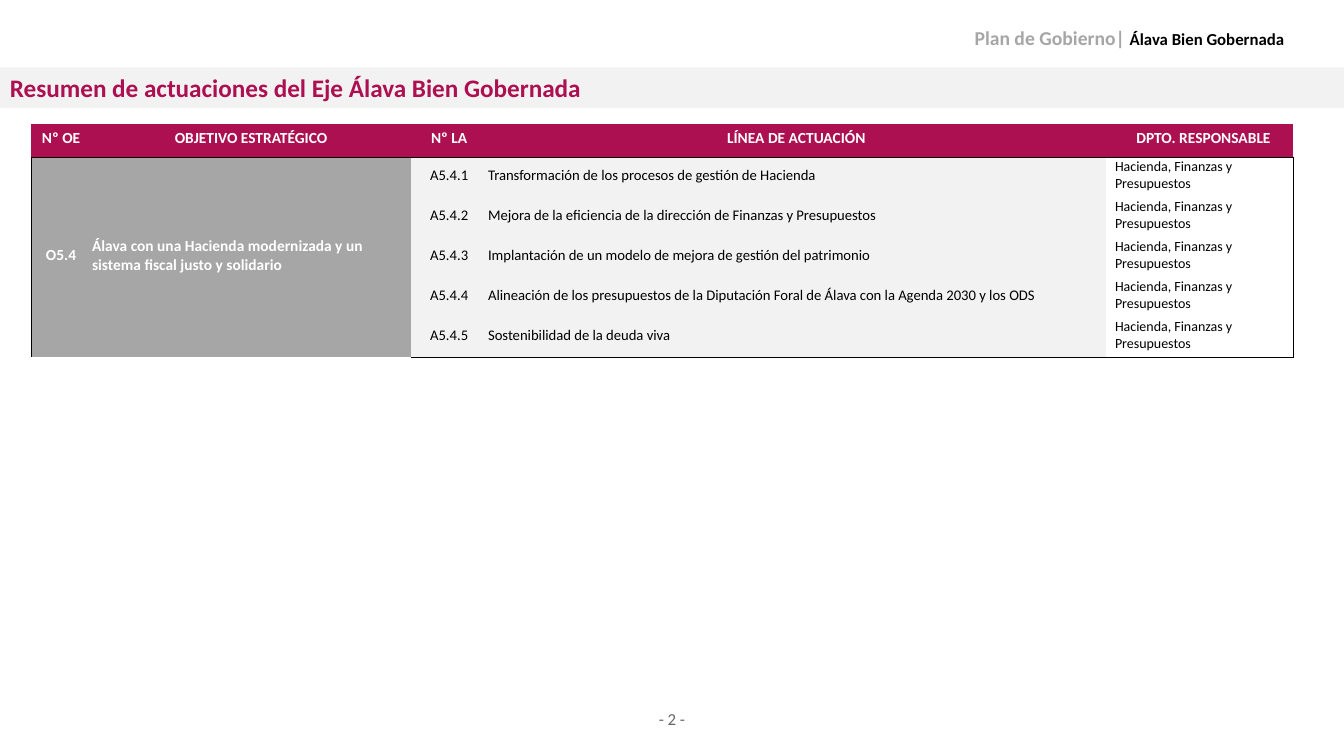
import pptx
import pptx.util
import pptx.dml.color
import pptx.enum.shapes
import pptx.enum.text
import pptx.oxml.ns
from lxml import etree

Cm, Pt = pptx.util.Cm, pptx.util.Pt
ALIGN = pptx.enum.text.PP_ALIGN
ANCHOR = pptx.enum.text.MSO_ANCHOR
qn = pptx.oxml.ns.qn

COLORS = {
    "brand": "AC1051", "band": "F2F2F2", "gray": "A6A6A6",
    "number": "666666", "black": "000000", "white": "FFFFFF",
}

HEADERS = ["Nº OE", "OBJETIVO ESTRATÉGICO", "Nº LA", "LÍNEA DE ACTUACIÓN", "DPTO. RESPONSABLE"]
OBJECTIVE = ["O5.4", "Álava con una Hacienda modernizada y un sistema fiscal justo y solidario"]
DEPARTMENT = "Hacienda, Finanzas y Presupuestos"
ACTIONS = [
    "Transformación de los procesos de gestión de Hacienda",
    "Mejora de la eficiencia de la dirección de Finanzas y Presupuestos",
    "Implantación de un modelo de mejora de gestión del patrimonio",
    "Alineación de los presupuestos de la Diputación Foral de Álava con la Agenda 2030 y los ODS",
    "Sostenibilidad de la deuda viva",
]
COL_WIDTHS = [1.3, 8.28, 1.7, 15.8, 4.72]
HEADER_HEIGHT, ROW_HEIGHT = 0.84, 0.99


def rgb(name):
    return pptx.dml.color.RGBColor.from_string(COLORS[name])


def add_run(p, text, size=11, color="black", bold=False, font="Calibri"):
    r = p.add_run()
    r.text = text
    r.font.name, r.font.size, r.font.bold = font, Pt(size), bold
    r.font.color.rgb = rgb(color)


class SlideBuilder:
    def __init__(self, prs):
        self.s = prs.slides.add_slide(prs.slide_layouts[6])

    def text(self, box, runs, align, anchor=ANCHOR.TOP):
        tf = self.s.shapes.add_textbox(*map(Cm, box)).text_frame
        tf.word_wrap, tf.vertical_anchor = True, anchor
        p = tf.paragraphs[0]
        p.alignment = align
        for text, fmt in runs:
            add_run(p, text, **fmt)

    def title_band(self, box, text):
        sp = self.s.shapes.add_shape(pptx.enum.shapes.MSO_SHAPE.RECTANGLE, *map(Cm, box))
        sp.shadow.inherit = False
        sp.fill.solid()
        sp.fill.fore_color.rgb = rgb("band")
        sp.line.fill.background()
        tf = sp.text_frame
        tf.word_wrap, tf.vertical_anchor = True, ANCHOR.TOP
        p = tf.paragraphs[0]
        p.alignment, p.space_after = ALIGN.LEFT, Pt(6)
        add_run(p, text, size=18, color="brand", bold=True)

    def table(self, left, top, rows, widths, heights):
        tbl = self.s.shapes.add_table(len(rows), len(widths), Cm(left), Cm(top),
                                      Cm(sum(widths)), Cm(sum(heights))).table
        tbl.first_row = tbl.horz_banding = False
        for col, width in zip(tbl.columns, widths):
            col.width = Cm(width)
        for row, height in zip(tbl.rows, heights):
            row.height = Cm(height)
        for i, values in enumerate(rows):
            for j, (text, fill, align, fmt) in enumerate(values):
                cell = tbl.cell(i, j)
                self.frame_cell(cell, i, j, len(rows) - 1, len(widths) - 1)
                self.fill_cell(cell, text, fill, align, fmt)
        return tbl

    def frame_cell(self, cell, i, j, last_row, last_col):
        """Draw the black frame around the body rows and no other border."""
        sides = {
            "L": i > 0 and j == 0,
            "R": i > 0 and j == last_col,
            "T": i == 1,
            "B": i in (0, last_row),
        }
        tc_pr = cell._tc.get_or_add_tcPr()
        for side, visible in sides.items():
            ln = etree.SubElement(tc_pr, qn(f"a:ln{side}"), w=str(Pt(1)))
            if visible:
                fill = etree.SubElement(ln, qn("a:solidFill"))
                etree.SubElement(fill, qn("a:srgbClr"), val=COLORS["black"])
            else:
                etree.SubElement(ln, qn("a:noFill"))

    def fill_cell(self, cell, text, fill, align, fmt):
        cell.fill.solid()
        cell.fill.fore_color.rgb = rgb(fill)
        cell.margin_left = cell.margin_right = cell.margin_top = Cm(0.03)
        cell.margin_bottom = Cm(0.13)
        cell.vertical_anchor = ANCHOR.MIDDLE
        p = cell.text_frame.paragraphs[0]
        p.alignment = align
        p._p.get_or_add_pPr().set("marL", str(Cm(0.2)))
        if text:
            add_run(p, text, **fmt)


def summary_rows():
    strong = dict(color="white", bold=True)
    rows = [[(h, "brand", ALIGN.CENTER, strong) for h in HEADERS]]
    for n, action in enumerate(ACTIONS, 1):
        code, goal = OBJECTIVE if n == 1 else ("", "")
        rows.append([
            (code, "gray", ALIGN.CENTER, strong),
            (goal, "gray", ALIGN.LEFT, strong),
            (f"A5.4.{n}", "band", ALIGN.CENTER, dict(size=10.5)),
            (action, "band", ALIGN.LEFT, dict(size=10.5)),
            (DEPARTMENT, "white", ALIGN.LEFT, dict(size=10)),
        ])
    return rows


def main():
    prs = pptx.Presentation()
    prs.slide_width, prs.slide_height = Cm(33.87), Cm(19.05)
    slide = SlideBuilder(prs)
    slide.text((15.6, 17.73, 2.67, 0.76), [("- 2 -", dict(size=12, color="number"))], ALIGN.CENTER)
    slide.text((22.71, 0.38, 9.91, 1.14), [
        ("Plan de Gobierno| ", dict(size=14, color="gray", bold=True)),
        ("Álava Bien Gobernada", dict(size=12, bold=True)),
    ], ALIGN.RIGHT, ANCHOR.MIDDLE)
    slide.title_band((0, 1.7, 34.11, 1.02), "Resumen de actuaciones del Eje Álava Bien Gobernada")
    heights = [HEADER_HEIGHT] + [ROW_HEIGHT] * len(ACTIONS)
    tbl = slide.table(0.79, 3.12, summary_rows(), COL_WIDTHS, heights)
    for j in range(len(OBJECTIVE)):
        tbl.cell(1, j).merge(tbl.cell(len(ACTIONS), j))
    prs.save("out.pptx")


if __name__ == "__main__":
    main()
